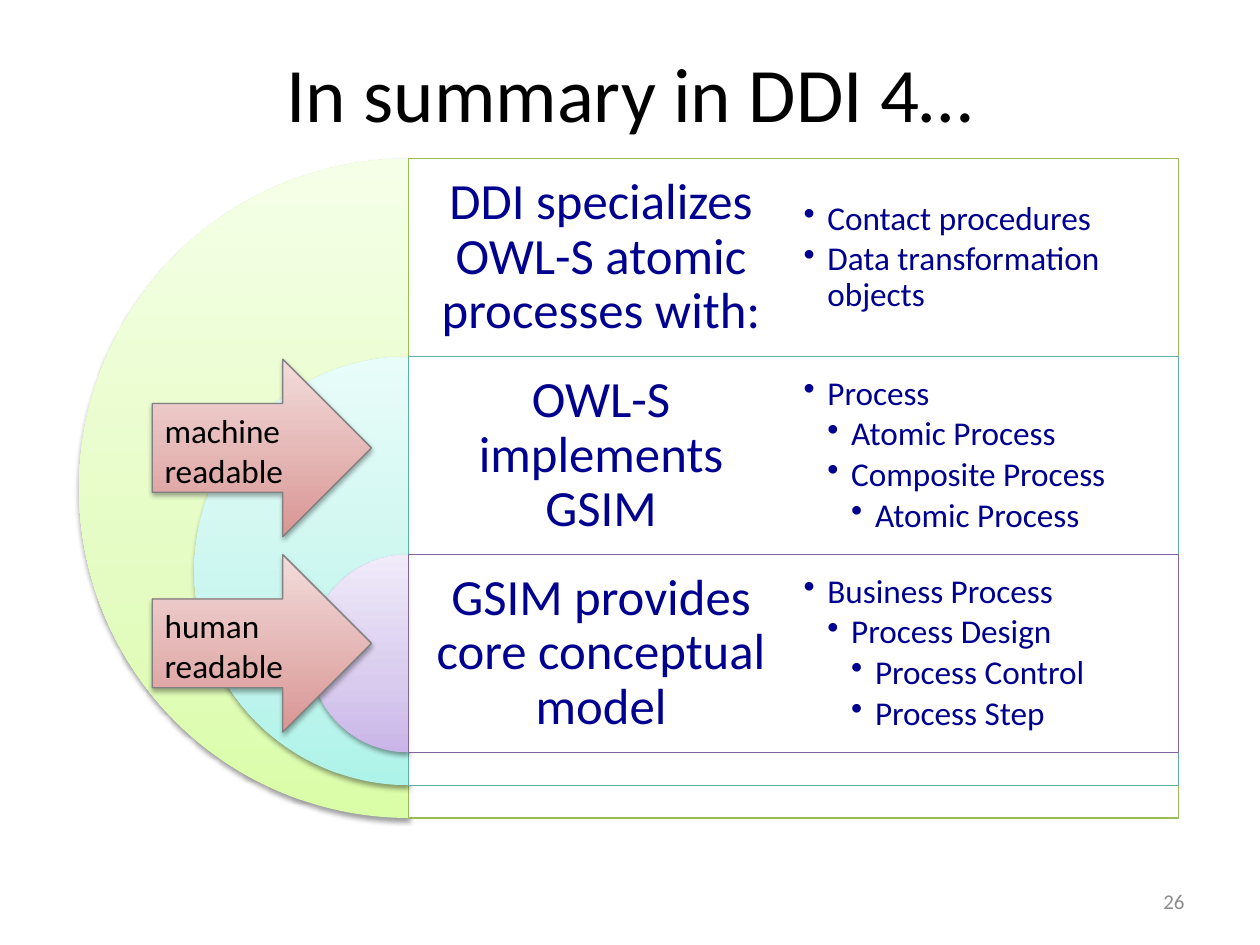
"""Build the DDI 4 summary slide with nested half rings, text bands and arrows."""
from lxml import etree
from pptx import Presentation
from pptx.dml.color import RGBColor
from pptx.enum.shapes import MSO_SHAPE
from pptx.enum.text import MSO_ANCHOR, PP_ALIGN
from pptx.oxml import parse_xml
from pptx.oxml.ns import nsdecls, qn
from pptx.util import Cm, Pt

PIE, RECT, ARROW = MSO_SHAPE.CHORD.PIE, MSO_SHAPE.RECTANGLE, MSO_SHAPE.RIGHT_ARROW
TOP, MIDDLE = MSO_ANCHOR.TOP, MSO_ANCHOR.MIDDLE
LEFT, CENTER, RIGHT = PP_ALIGN.LEFT, PP_ALIGN.CENTER, PP_ALIGN.RIGHT

BLACK = RGBColor(0x00, 0x00, 0x00)
WHITE = RGBColor(0xFF, 0xFF, 0xFF)
NAVY = RGBColor(0x00, 0x00, 0x90)
GRAY = RGBColor(0x8C, 0x8C, 0x8C)
ARROW_LINE = RGBColor(0x80, 0x80, 0x80)
GREEN = RGBColor(0x9B, 0xBB, 0x59)
TEAL = RGBColor(0x5E, 0xAF, 0xA6)
PURPLE = RGBColor(0x80, 0x64, 0xA2)
GREEN_FADE = [(0, RGBColor(0xDA, 0xFD, 0xA7)), (35, RGBColor(0xE4, 0xFC, 0xC2)),
              (100, RGBColor(0xF5, 0xFF, 0xE7))]
TEAL_FADE = [(0, RGBColor(0xAE, 0xF3, 0xE9)), (35, RGBColor(0xC6, 0xF5, 0xEE)),
             (100, RGBColor(0xE8, 0xFC, 0xF9))]
PURPLE_FADE = [(0, RGBColor(0xC9, 0xB5, 0xE8)), (35, RGBColor(0xD8, 0xCB, 0xEE)),
               (100, RGBColor(0xF0, 0xEA, 0xF9))]
RED_FADE = [(0, RGBColor(0xD9, 0x96, 0x94)), (100, RGBColor(0xF2, 0xDC, 0xDB))]

BANDS = [
    ("DDI specializes OWL-S atomic processes with:", GREEN, GREEN_FADE,
     [(1, "Contact procedures"), (1, "Data transformation objects")]),
    ("OWL-S implements GSIM", TEAL, TEAL_FADE,
     [(1, "Process"), (2, "Atomic Process"), (2, "Composite Process"),
      (3, "Atomic Process")]),
    ("GSIM provides core conceptual model", PURPLE, PURPLE_FADE,
     [(1, "Business Process"), (2, "Process Design"), (3, "Process Control"),
      (3, "Process Step")]),
]
ARROWS = [("human readable", 11.18), ("machine readable", 7.24)]

AXIS, BAND_TOP, BAND_H, RING_STEP = 8.24, 3.2, 3.99, 4.65
BAND_W, COL_W = 15.52, 7.76
INDENT = 0.48


def add_text(sp, lines, size, color, align, anchor, inset=0.25, after=0, spacing=1):
    tf = sp.text_frame
    tf.word_wrap = True
    tf.vertical_anchor = anchor
    tf.margin_left = tf.margin_right = Cm(inset)
    tf.margin_top = tf.margin_bottom = Cm(min(inset, 0.3) if after else 0.13)
    for n, (level, text) in enumerate(lines):
        p = tf.paragraphs[0] if n == 0 else tf.add_paragraph()
        p.alignment = align
        p.line_spacing = spacing
        p.space_after = Pt(after)
        if level:
            pPr = p._p.get_or_add_pPr()
            pPr.set("lvl", str(level))
            pPr.set("marL", str(Cm(INDENT * level)))
            pPr.set("indent", str(-Cm(INDENT)))
            etree.SubElement(pPr, qn("a:buChar"), char="•")
        r = p.add_run()
        r.text = text
        r.font.size = Pt(size)
        r.font.name = "Calibri"
        r.font.color.rgb = color


def add_faded(shape, left, top, width, height, stops, alpha):
    sp = s.shapes.add_shape(shape, Cm(left), Cm(top), Cm(width), Cm(height))
    sp.line.fill.background()
    gs = "".join(f'<a:gs pos="{pos * 1000}"><a:srgbClr val="{color}"/></a:gs>'
                 for pos, color in stops)
    fade = parse_xml(f'<a:gradFill {nsdecls("a")} rotWithShape="1"><a:gsLst>{gs}</a:gsLst>'
                     '<a:lin ang="16200000" scaled="0"/></a:gradFill>')
    sp._element.spPr.find(qn("a:prstGeom")).addnext(fade)
    sp._element.spPr.append(parse_xml(
        f'<a:effectLst {nsdecls("a")}><a:outerShdw blurRad="{Pt(3.1)}" dist="{Pt(1.7)}" '
        'dir="5400000" rotWithShape="0"><a:srgbClr val="000000">'
        f'<a:alpha val="{alpha * 1000}"/></a:srgbClr></a:outerShdw></a:effectLst>'))
    return sp


prs = Presentation()
prs.slide_width, prs.slide_height = Cm(25.4), Cm(19.05)
s = prs.slides.add_slide(prs.slide_layouts[6])

sp = s.shapes.add_textbox(Cm(0.61), Cm(0.25), Cm(24.18), Cm(3.2))
add_text(sp, [(0, "In summary in DDI 4…")], 44, BLACK, CENTER, MIDDLE)
sp = s.shapes.add_textbox(Cm(18.21), Cm(17.65), Cm(5.92), Cm(1.02))
add_text(sp, [(0, "26")], 12, GRAY, RIGHT, MIDDLE)

for i, (heading, color, stops, bullets) in enumerate(BANDS):
    top = BAND_TOP + i * BAND_H
    size = BAND_H + RING_STEP * (len(BANDS) - 1 - i)
    sp = add_faded(PIE, AXIS - size / 2, top, size, size, stops, 38)
    sp.adjustments[0], sp.adjustments[1] = 54, 162

    sp = s.shapes.add_shape(RECT, Cm(AXIS), Cm(top), Cm(BAND_W), Cm(size))
    sp.shadow.inherit = False
    sp.fill.solid()
    sp.fill.fore_color.rgb = WHITE
    clr = sp._element.spPr.find(qn("a:solidFill")).find(qn("a:srgbClr"))
    etree.SubElement(clr, qn("a:alpha"), val="90000")
    sp.line.color.rgb = color
    sp.line.width = Pt(0.75)

    sp = s.shapes.add_textbox(Cm(AXIS), Cm(top), Cm(COL_W), Cm(BAND_H))
    add_text(sp, [(0, heading)], 29, NAVY, CENTER, MIDDLE, 0.3, 10, 0.9)
    sp = s.shapes.add_textbox(Cm(AXIS + COL_W), Cm(top), Cm(COL_W), Cm(BAND_H))
    add_text(sp, bullets, 19, NAVY, LEFT, MIDDLE, 0.2, 2.8, 0.9)

for label, top in ARROWS:
    sp = add_faded(ARROW, 3.07, top, 4.42, 3.58, RED_FADE, 35)
    sp.line.color.rgb = ARROW_LINE
    sp.line.width = Pt(0.75)
    add_text(sp, [(0, label)], 19, BLACK, LEFT, TOP)

prs.save("out.pptx")
